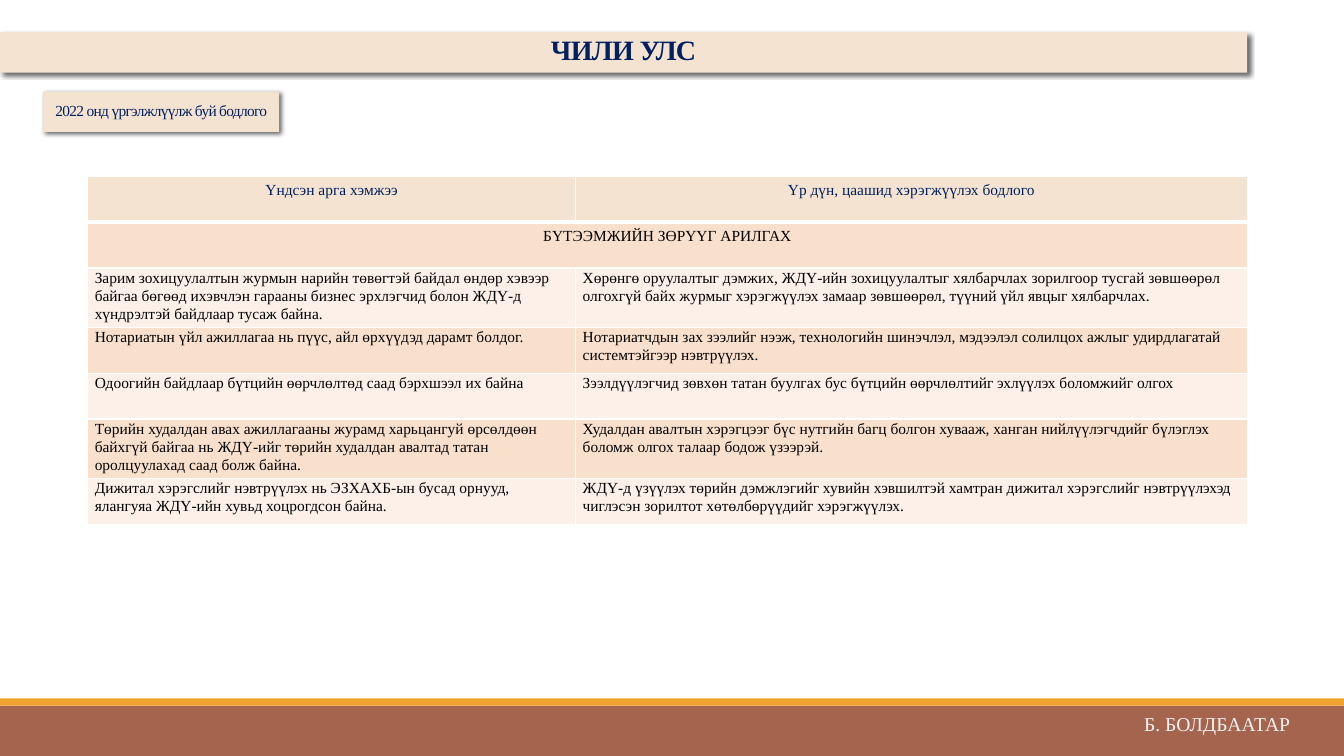
from lxml.etree import SubElement
from pptx import Presentation
from pptx.dml.color import RGBColor
from pptx.enum.shapes import MSO_SHAPE as Shape
from pptx.enum.text import MSO_ANCHOR as Anchor, PP_ALIGN as Align
from pptx.oxml import parse_xml
from pptx.oxml.ns import nsdecls, qn
from pptx.util import Inches, Pt

NAVY, SAND, PEACH, CREAM = "002060", "F5E3D1", "F9E0CD", "FCF0E8"


def paint(target, color):
    """Give a shape, cell or font fill a solid colour."""
    target.fill.solid()
    target.fill.fore_color.rgb = RGBColor.from_string(color)


def style_text(paragraph, size, color, bold=False):
    for run in paragraph.runs:
        run.font.name = "Times New Roman"
        run.font.size = Pt(size)
        run.font.bold = bold
        paint(run.font, color)


presentation = Presentation()
presentation.slide_width = Inches(13.33)
presentation.slide_height = Inches(7.5)
slide = presentation.slides.add_slide(presentation.slide_layouts[6])

# Footer bands
for top, height, color in ((7, 0.5, "A5644E"), (6.93, 0.07, "F0A22E")):
    band = slide.shapes.add_shape(
        Shape.RECTANGLE, 0, Inches(top), presentation.slide_width, Inches(height))
    band.shadow.inherit = False
    band.line.fill.background()
    paint(band, color)

# Title bar and subtitle label, with a soft shadow
banners = (
    ("ЧИЛИ УЛС", 0, 0.32, 12.37, 20, True),
    ("2022 онд үргэлжлүүлж буй бодлого", 0.43, 0.91, 2.34, 11, False),
)
for text, left, top, width, size, bold in banners:
    banner = slide.shapes.add_shape(
        Shape.RECTANGLE, Inches(left), Inches(top), Inches(width), Inches(0.4))
    banner.line.fill.background()
    paint(banner, SAND)
    banner.shadow.inherit = False
    effects = banner.element.spPr.find(qn("a:effectLst"))
    effects.append(parse_xml(
        f'<a:outerShdw {nsdecls("a")} blurRad="{Pt(3.5)}" dist="{Pt(2)}" dir="2700000" '
        'algn="tl" rotWithShape="0"><a:srgbClr val="000000"><a:alpha val="60000"/>'
        '</a:srgbClr></a:outerShdw>'))
    frame = banner.text_frame
    frame.text = text
    frame.word_wrap = True
    frame.vertical_anchor = Anchor.MIDDLE
    paragraph = frame.paragraphs[0]
    paragraph.alignment = Align.CENTER
    paragraph.line_spacing = 0.85
    style_text(paragraph, size, NAVY, bold)
    paragraph.runs[0].font._element.set("spc", "-50")

# Author
author = slide.shapes.add_textbox(Inches(11.25), Inches(7.01), Inches(1.84), Inches(0.34))
author.text_frame.text = "Б. БОЛДБААТАР"
author.text_frame.word_wrap = True
style_text(author.text_frame.paragraphs[0], 14, "F2F2F2")

# Policy table
rows = (
    ("Үндсэн арга хэмжээ", "Үр дүн, цаашид хэрэгжүүлэх бодлого"),
    ("БҮТЭЭМЖИЙН ЗӨРҮҮГ АРИЛГАХ", ""),
    ("Зарим зохицуулалтын журмын нарийн төвөгтэй байдал өндөр хэвээр байгаа бөгөөд "
     "ихэвчлэн гарааны бизнес эрхлэгчид болон ЖДҮ-д хүндрэлтэй байдлаар тусаж байна.",
     "Хөрөнгө оруулалтыг дэмжих, ЖДҮ-ийн зохицуулалтыг хялбарчлах зорилгоор тусгай зөвшөөрөл "
     "олгохгүй байх журмыг хэрэгжүүлэх замаар зөвшөөрөл, түүний үйл явцыг хялбарчлах."),
    ("Нотариатын үйл ажиллагаа нь пүүс, айл өрхүүдэд дарамт болдог.",
     "Нотариатчдын зах зээлийг нээж, технологийн шинэчлэл, мэдээлэл солилцох ажлыг "
     "удирдлагатай системтэйгээр нэвтрүүлэх."),
    ("Одоогийн байдлаар бүтцийн өөрчлөлтөд саад бэрхшээл их байна",
     "Зээлдүүлэгчид зөвхөн татан буулгах бус бүтцийн өөрчлөлтийг эхлүүлэх боломжийг олгох"),
    ("Төрийн худалдан авах ажиллагааны журамд харьцангуй өрсөлдөөн байхгүй байгаа нь "
     "ЖДҮ-ийг төрийн худалдан авалтад татан оролцуулахад саад болж байна.",
     "Худалдан авалтын хэрэгцээг бүс нутгийн багц болгон хувааж, ханган нийлүүлэгчдийг "
     "бүлэглэх боломж олгох талаар бодож үзээрэй."),
    ("Дижитал хэрэгслийг нэвтрүүлэх нь ЭЗХАХБ-ын бусад орнууд, ялангуяа ЖДҮ-ийн хувьд "
     "хоцрогдсон байна.",
     "ЖДҮ-д үзүүлэх төрийн дэмжлэгийг хувийн хэвшилтэй хамтран дижитал хэрэгслийг "
     "нэвтрүүлэхэд чиглэсэн зорилтот хөтөлбөрүүдийг хэрэгжүүлэх."),
)
column_widths = (4.84, 6.66)
row_height = 0.455
table = slide.shapes.add_table(
    len(rows), len(column_widths), Inches(0.87), Inches(1.75),
    Inches(sum(column_widths)), Inches(row_height * len(rows))).table
for column, width in zip(table.columns, column_widths):
    column.width = Inches(width)
table.cell(1, 0).merge(table.cell(1, 1))

for row_index, texts in enumerate(rows):
    is_header = row_index == 0
    for column_index, text in enumerate(texts):
        cell = table.cell(row_index, column_index)
        cell.text = text
        paragraph = cell.text_frame.paragraphs[0]
        style_text(paragraph, 11, NAVY if is_header else "000000")
        if row_index < 2:
            paragraph.alignment = Align.CENTER
        else:
            paragraph.line_spacing = 1.07
            cell.margin_left = cell.margin_right = Inches(0.07)
            cell.margin_top = cell.margin_bottom = 0

        # White borders come before the fill in the cell properties
        properties = cell._tc.get_or_add_tcPr()
        for side in ("L", "R", "T", "B"):
            weight = 3 if is_header and side == "B" else 1
            border = SubElement(properties, qn(f"a:ln{side}"), w=str(Pt(weight)))
            SubElement(SubElement(border, qn("a:solidFill")), qn("a:srgbClr"), val="FFFFFF")
        paint(cell, SAND if is_header else (CREAM, PEACH)[row_index % 2])

presentation.save("out.pptx")
